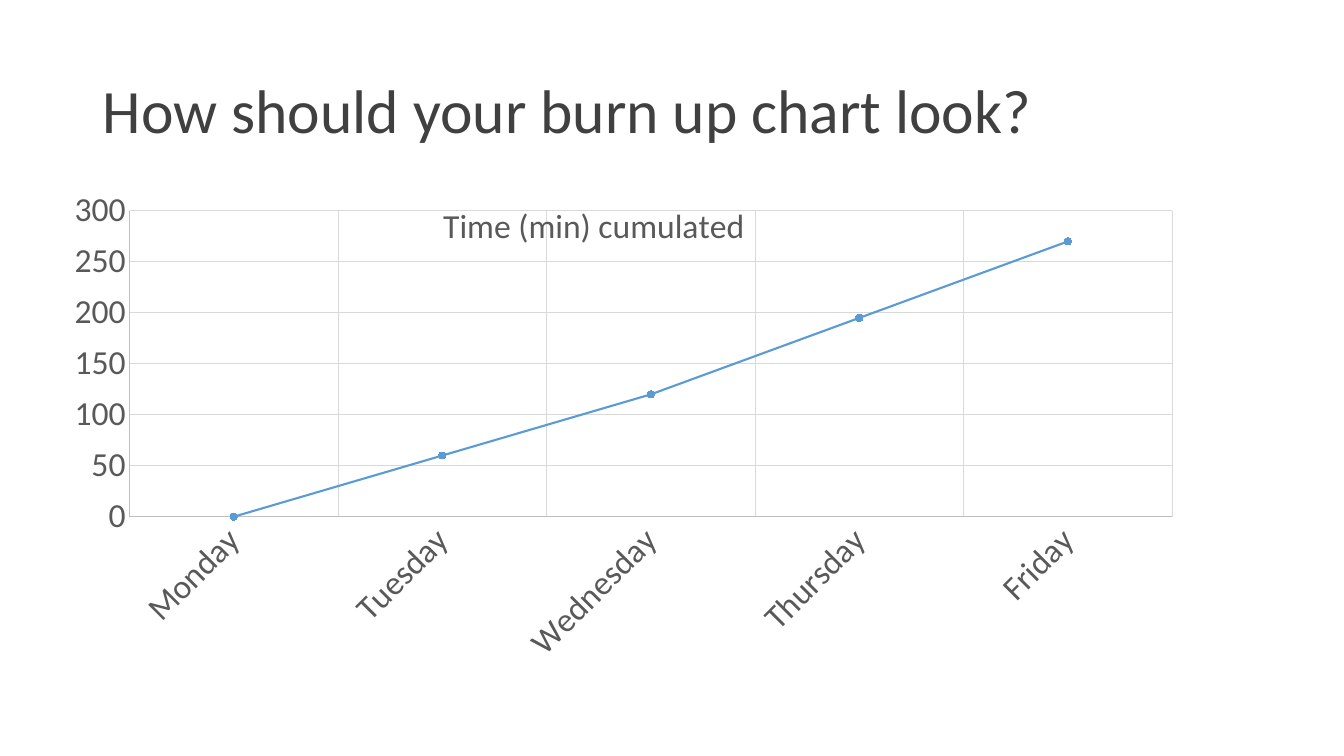
from lxml import etree
from pptx import Presentation
from pptx.chart.data import CategoryChartData
from pptx.dml.color import RGBColor
from pptx.enum import chart as ch, text
from pptx.oxml.ns import qn
from pptx.util import Inches, Pt

FONT = "Calibri"
BLUE, GREY, AXIS, GRID = "5B9BD5", "595959", "BFBFBF", "D9D9D9"
MINUTES = {"Monday": 0, "Tuesday": 60, "Wednesday": 120,
           "Thursday": 195, "Friday": 270}


def colour(value):
    return RGBColor.from_string(value)


def style_font(font, size, value):
    font.name, font.size, font.bold = FONT, Pt(size), False
    font.color.rgb = colour(value)


def style_line(line, value, width):
    line.color.rgb = colour(value)
    line.width = Pt(width)


def place(element, index, **settings):
    """Give a chart part a manual layout, in fractions of the chart."""
    for old in element.findall(qn("c:layout")):
        element.remove(old)
    layout = etree.Element(qn("c:layout"))
    manual = etree.SubElement(layout, qn("c:manualLayout"))
    for tag, value in settings.items():
        etree.SubElement(manual, qn("c:" + tag)).set("val", str(value))
    element.insert(index, layout)


def style_axis(axis):
    axis.major_tick_mark = axis.minor_tick_mark = ch.XL_TICK_MARK.NONE
    axis.has_major_gridlines = True
    style_line(axis.major_gridlines.format.line, GRID, 0.75)
    style_line(axis.format.line, AXIS, 0.75)
    style_font(axis.tick_labels.font, 24, GREY)


def add_title(slide, wording):
    title = slide.shapes.title
    title.left, title.top = Inches(0.92), Inches(0.4)
    title.width, title.height = Inches(11.5), Inches(1.45)
    frame = title.text_frame
    frame.text = wording
    frame.word_wrap = True
    frame.vertical_anchor = text.MSO_ANCHOR.MIDDLE
    heading = frame.paragraphs[0]
    heading.alignment = text.PP_ALIGN.LEFT
    heading.line_spacing = 0.9
    style_font(heading.font, 44, "404041")


def add_chart_title(chart, wording):
    chart.has_title = True
    chart_title = chart.chart_title
    chart_title.text_frame.text = wording
    style_font(chart_title.text_frame.paragraphs[0].font, 24, GREY)
    element = chart_title._element
    place(element, 1, xMode="edge", yMode="edge", x=0.35, y=0.02)
    element.find(qn("c:overlay")).set("val", "1")


def add_burn_up_chart(slide, name, minutes):
    data = CategoryChartData()
    data.categories = list(minutes)
    data.add_series(name, list(minutes.values()))
    chart = slide.shapes.add_chart(
        ch.XL_CHART_TYPE.LINE_MARKERS, Inches(0.41), Inches(1.85),
        Inches(11.22), Inches(5.39), data).chart
    chart.has_legend = False
    style_font(chart.font, 10, "000000")
    add_chart_title(chart, name)

    days, total = chart.category_axis, chart.value_axis
    for axis in (days, total):
        style_axis(axis)
    days._element.find(qn("c:txPr")).find(qn("a:bodyPr")).set("rot", "-2700000")
    total.minimum_scale, total.maximum_scale, total.major_unit = 0, 300, 50
    total.tick_labels.number_format = "@"
    total.tick_labels.number_format_is_linked = False

    plot = chart.plots[0]
    plot.vary_by_categories = False
    progress = plot.series[0]
    progress.smooth = False
    style_line(progress.format.line, BLUE, 1.5)
    marker = progress.marker
    marker.style, marker.size = ch.XL_MARKER_STYLE.CIRCLE, 5
    marker.format.fill.solid()
    marker.format.fill.fore_color.rgb = colour(BLUE)
    style_line(marker.format.line, BLUE, 0.75)

    place(chart._chartSpace.chart.plotArea, 0, layoutTarget="inner",
          xMode="edge", yMode="edge", x=0.078, y=0.045, w=0.922, h=0.563)


def main():
    deck = Presentation()
    deck.slide_width, deck.slide_height = Inches(13.33), Inches(7.5)
    slide = deck.slides.add_slide(deck.slide_layouts[5])
    add_title(slide, "How should your burn up chart look?")
    add_burn_up_chart(slide, "Time (min) cumulated", MINUTES)
    deck.save("out.pptx")


if __name__ == "__main__":
    main()
